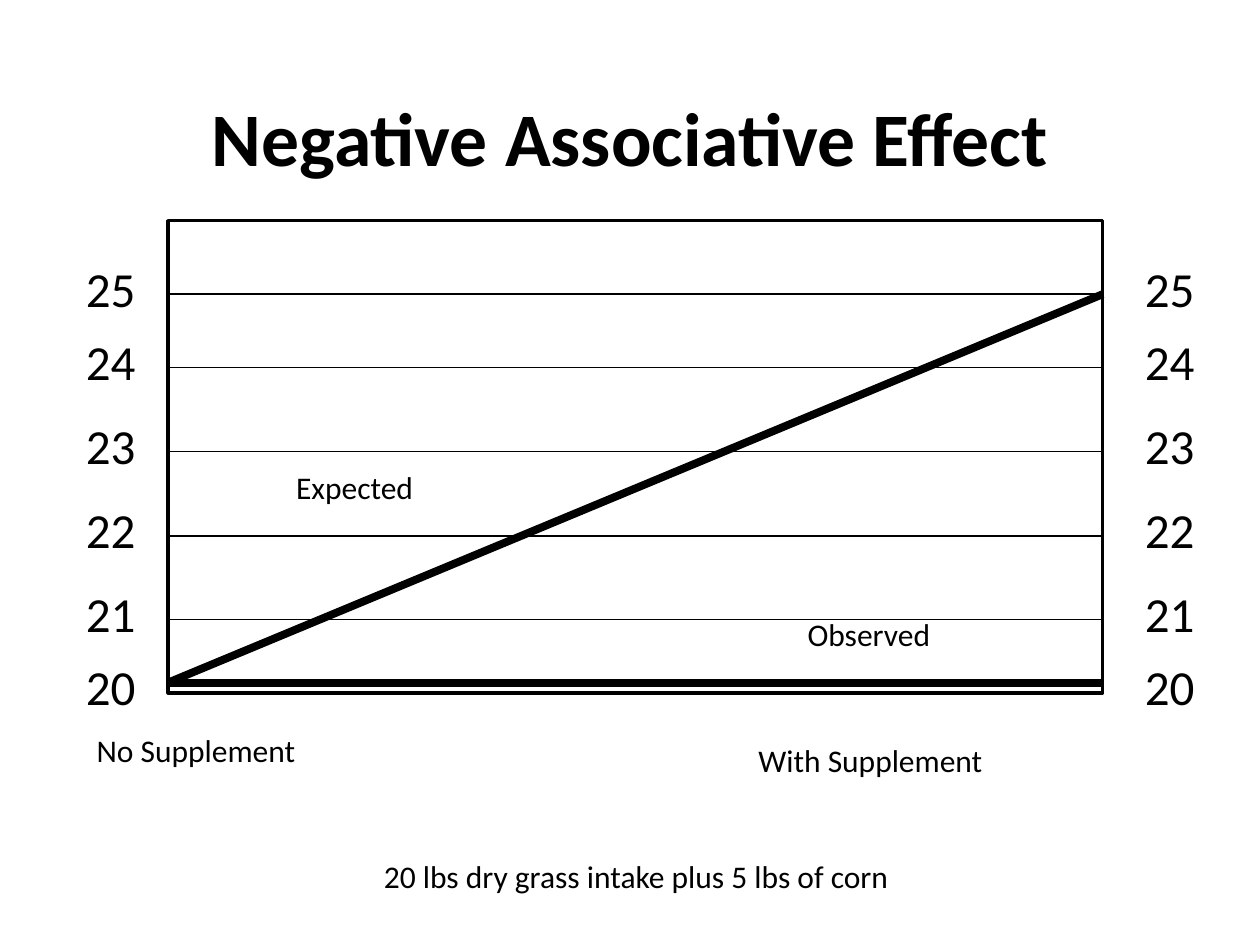
from lxml.etree import SubElement
from pptx import Presentation
from pptx.dml.color import RGBColor as RGB
from pptx.enum.shapes import MSO_CONNECTOR as CONN, MSO_SHAPE as SHAPE
from pptx.enum.text import MSO_ANCHOR as ANCHOR, MSO_AUTO_SIZE as AUTO, PP_ALIGN as ALIGN
from pptx.oxml.ns import qn
from pptx.util import Cm, Pt

COLORS = {"ink": "000000", "paper": "FFFFFF"}
FONT = "Calibri"

TITLE = "Negative Associative Effect"
CAPTIONS = [
    ("With Supplement", 15.04, 14.81, 6.88, ALIGN.JUSTIFY),
    ("No Supplement", 1.7, 14.61, 6.88, ALIGN.JUSTIFY),
    ("20 lbs dry grass intake plus 5 lbs of corn", 7.49, 17.15, 11.4, ALIGN.LEFT),
    ("Observed", 16.03, 12.27, 3.02, ALIGN.LEFT),
    ("Expected", 5.72, 9.32, 2.9, ALIGN.LEFT),
]
LEVELS = {20: 13.97, 21: 12.49, 22: 10.8, 23: 9.1, 24: 7.41, 25: 5.93}
LEFT, TOP, RIGHT, BOTTOM = 3.39, 4.45, 22.23, 13.97
BASELINE = 13.76
SERIES_ENDS = [BASELINE, LEVELS[25]]
LABEL_LEFTS = [1.48, 22.83]
LABEL_RISE = 0.85


def color(name):
    return RGB.from_string(COLORS[name])


def add_text(slide, text, x, y, w, h, size, align=ALIGN.LEFT, bold=False, anchor=ANCHOR.TOP):
    tf = slide.shapes.add_textbox(Cm(x), Cm(y), Cm(w), Cm(h)).text_frame
    tf.word_wrap = True
    tf.auto_size = AUTO.NONE
    tf.vertical_anchor = anchor
    p = tf.paragraphs[0]
    p.text = text
    p.alignment = align
    p.font.name = FONT
    p.font.size = Pt(size)
    p.font.bold = bold
    p.font.color.rgb = color("ink")


def add_line(slide, y1, y2, width):
    line = slide.shapes.add_connector(CONN.STRAIGHT, Cm(LEFT), Cm(y1), Cm(RIGHT), Cm(y2))
    line.line.color.rgb = color("ink")
    line.line.width = Pt(width)
    SubElement(line._element.spPr, qn("a:effectLst"))


def add_plot(slide):
    sp = slide.shapes.add_shape(SHAPE.RECTANGLE, Cm(LEFT), Cm(TOP), Cm(RIGHT - LEFT), Cm(BOTTOM - TOP))
    sp.shadow.inherit = False
    sp.fill.solid()
    sp.fill.fore_color.rgb = color("paper")
    sp.line.color.rgb = color("ink")
    sp.line.width = Pt(2)
    for level, y in LEVELS.items():
        if y < BOTTOM:
            add_line(slide, y, y, 1)
        for x in LABEL_LEFTS:
            add_text(slide, str(level), x, y - LABEL_RISE, 1.6, 1.45, 28)
    for end in SERIES_ENDS:
        add_line(slide, BASELINE, end, 4.5)


def main():
    prs = Presentation()
    prs.slide_width, prs.slide_height = Cm(25.4), Cm(19.05)
    slide = prs.slides.add_slide(prs.slide_layouts[6])
    add_text(slide, TITLE, 0, 1.9, 25.4, 1.68, 43.2, ALIGN.CENTER, True, ANCHOR.MIDDLE)
    add_plot(slide)
    for text, x, y, w, align in CAPTIONS:
        add_text(slide, text, x, y, w, 1.02, 18, align)
    prs.save("out.pptx")


if __name__ == "__main__":
    main()
